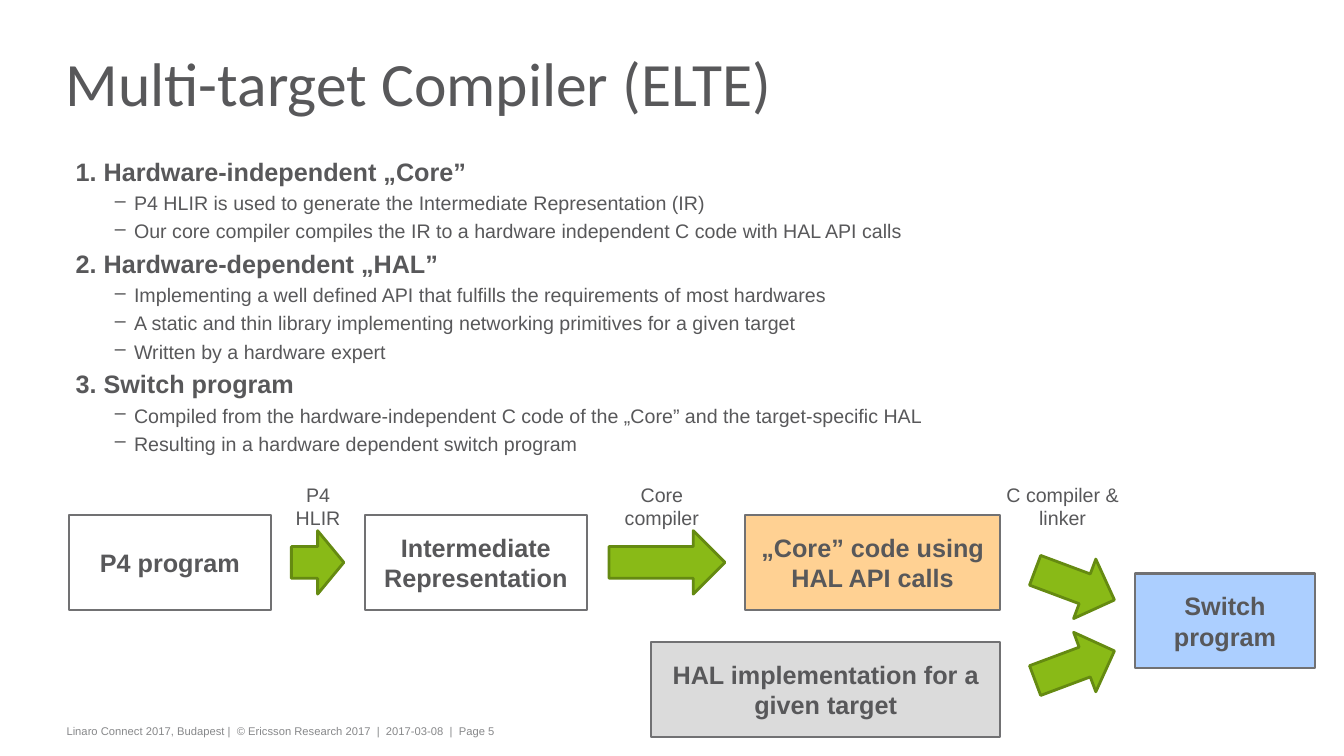
from pptx import Presentation
from pptx.dml.color import RGBColor
from pptx.enum.shapes import MSO_SHAPE
from pptx.enum.text import MSO_ANCHOR, PP_ALIGN
from pptx.oxml.ns import qn
from pptx.util import Inches, Pt
from lxml import etree

RECTANGLE, RIGHT_ARROW = MSO_SHAPE.RECTANGLE, MSO_SHAPE.RIGHT_ARROW
TOP, MIDDLE = MSO_ANCHOR.TOP, MSO_ANCHOR.MIDDLE
LEFT, CENTER = PP_ALIGN.LEFT, PP_ALIGN.CENTER

TEXT = RGBColor(0x58, 0x58, 0x5A)
FOOTER_GREY = RGBColor(0x87, 0x88, 0x8A)
BOX_LINE = RGBColor(0x71, 0x71, 0x73)
WHITE = RGBColor(0xFF, 0xFF, 0xFF)
ORANGE = RGBColor(0xFF, 0xD1, 0x93)
GREY = RGBColor(0xDB, 0xDB, 0xDB)
BLUE = RGBColor(0xAC, 0xCF, 0xFF)
GREEN = RGBColor(0x89, 0xBA, 0x17)
DARK_GREEN = RGBColor(0x65, 0x8A, 0x11)

TITLE = "Multi-target Compiler (ELTE)"
FOOTER = "Linaro Connect 2017, Budapest |  © Ericsson Research 2017  |  2017-03-08  |  Page 5"
SECTIONS = [
    ("1. Hardware-independent „Core”", [
        "P4 HLIR is used to generate the Intermediate Representation (IR)",
        "Our core compiler compiles the IR to a hardware independent C code with HAL API calls",
    ]),
    ("2. Hardware-dependent „HAL”", [
        "Implementing a well defined API that fulfills the requirements of most hardwares",
        "A static and thin library implementing networking primitives for a given target",
        "Written by a hardware expert",
    ]),
    ("3. Switch program", [
        "Compiled from the hardware-independent C code of the „Core” and the target-specific HAL",
        "Resulting in a hardware dependent switch program",
    ]),
]

BOX_HEIGHT, ARROW_HEIGHT = 0.94, 0.63
LABEL_TOP, LABEL_HEIGHT = 4.72, 0.61
FLOW_TOP = 5.11
FLOW_ARROW_TOP = FLOW_TOP + (BOX_HEIGHT - ARROW_HEIGHT) / 2
BOXES = [
    (["P4 program"], 0.68, FLOW_TOP, 2.01, WHITE),
    (["Intermediate", "Representation"], 3.62, FLOW_TOP, 2.2, WHITE),
    (["„Core” code using HAL API calls"], 7.39, FLOW_TOP, 2.53, ORANGE),
    (["HAL implementation for a given target"], 6.46, 6.37, 3.46, GREY),
    (["Switch program"], 11.26, 5.69, 1.78, BLUE),
]
ARROWS = [
    (2.89, FLOW_ARROW_TOP, 0.52, 0),
    (6.04, FLOW_ARROW_TOP, 1.15, 0),
    (10.24, 5.49, 0.84, 20.5),
    (10.24, 6.29, 0.84, -20.5),
]
LABELS = [("P4 HLIR", 2.69, 0.93), ("Core compiler", 5.83, 1.47), ("C compiler & linker", 9.61, 1.86)]

HEADING_FONT = {"name": "Arial", "size": Pt(18), "bold": True}
BULLET_FONT = {"name": "Arial", "size": Pt(14), "bold": False}
TITLE_FONT = {"name": "Calibri", "size": Pt(44), "bold": False}
FOOTER_FONT = {"name": "Arial", "size": Pt(8), "bold": False}


def set_frame(shape, anchor, side, edge):
    frame = shape.text_frame
    settings = {
        "word_wrap": True, "vertical_anchor": anchor,
        "margin_left": Inches(side), "margin_right": Inches(side),
        "margin_top": Inches(edge), "margin_bottom": Inches(edge),
    }
    for name, value in settings.items():
        setattr(frame, name, value)
    return frame


def write(para, text, font, color=TEXT, align=LEFT):
    para.alignment = align
    span = para.add_run()
    span.text = text
    for name, value in font.items():
        setattr(span.font, name, value)
    span.font.color.rgb = color


def next_para(frame, index):
    return frame.add_paragraph() if index else frame.paragraphs[0]


def add_bullet(para):
    properties = para._p.get_or_add_pPr()
    properties.set("marL", str(Inches(0.58)))
    properties.set("indent", str(Inches(-0.19)))
    etree.SubElement(properties, qn("a:buChar")).set("char", "–")


def add_text(page, left, top, width, height, side, edge):
    box = page.shapes.add_textbox(Inches(left), Inches(top), Inches(width), Inches(height))
    return set_frame(box, TOP, side, edge)


def add_filled(page, kind, left, top, width, height, fill, line, line_width):
    shape = page.shapes.add_shape(kind, Inches(left), Inches(top), Inches(width), Inches(height))
    shape.shadow.inherit = False
    shape.fill.solid()
    shape.fill.fore_color.rgb = fill
    shape.line.color.rgb = line
    shape.line.width = Pt(line_width)
    return shape


def add_title(page):
    title = page.shapes.title
    title.left, title.top = Inches(0.57), Inches(0.3)
    title.width, title.height = Inches(10.93), Inches(1.19)
    para = set_frame(title, MIDDLE, 0.08, 0).paragraphs[0]
    para.line_spacing = 0.75
    write(para, TITLE, TITLE_FONT)


def add_outline(page):
    frame = add_text(page, 0.67, 1.55, 8.94, 3.04, 0.08, 0)
    for index, (heading, points) in enumerate(SECTIONS):
        para = next_para(frame, index)
        if index:
            para.space_before = Pt(4)
        write(para, heading, HEADING_FONT)
        for point in points:
            para = frame.add_paragraph()
            para.level = 1
            para.space_before = Pt(3.3)
            add_bullet(para)
            write(para, point, BULLET_FONT)


def add_flow(page):
    for lines, left, top, width, fill in BOXES:
        box = add_filled(page, RECTANGLE, left, top, width, BOX_HEIGHT, fill, BOX_LINE, 1.5)
        frame = set_frame(box, MIDDLE, 0.13, 0.07)
        for index, line in enumerate(lines):
            write(next_para(frame, index), line, HEADING_FONT, align=CENTER)
    for left, top, width, angle in ARROWS:
        arrow = add_filled(page, RIGHT_ARROW, left, top, width, ARROW_HEIGHT, GREEN, DARK_GREEN, 2)
        arrow.rotation = angle
    for text, left, width in LABELS:
        frame = add_text(page, left, LABEL_TOP, width, LABEL_HEIGHT, 0.13, 0.07)
        write(frame.paragraphs[0], text, BULLET_FONT, align=CENTER)


def main():
    deck = Presentation()
    deck.slide_width, deck.slide_height = Inches(13.33), Inches(7.5)
    page = deck.slides.add_slide(deck.slide_layouts[5])
    add_title(page)
    add_outline(page)
    add_flow(page)
    footer = add_text(page, 0.58, 7.14, 10.79, 0.24, 0.08, 0.05)
    write(footer.paragraphs[0], FOOTER, FOOTER_FONT, FOOTER_GREY)
    deck.save("out.pptx")


if __name__ == "__main__":
    main()
